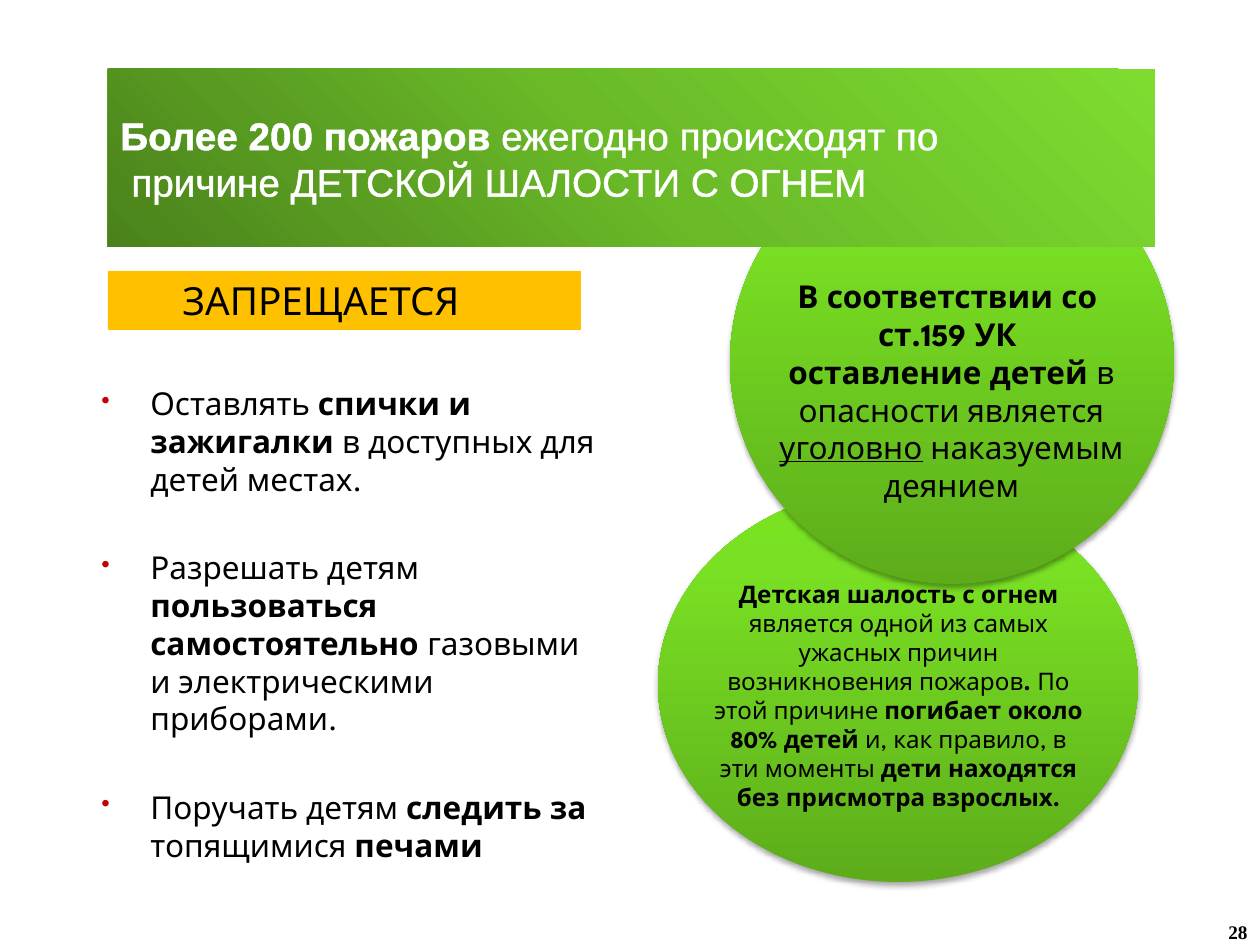
"""Builds a slide on fires caused by children playing with fire."""
import dataclasses
import typing

import pptx
import pptx.dml.color
import pptx.enum.shapes
import pptx.enum.text
import pptx.oxml
import pptx.oxml.ns
import pptx.util

SCALE = 914400 / 126
ALIGN = pptx.enum.text.PP_ALIGN
ANCHOR = pptx.enum.text.MSO_ANCHOR
SHAPE = pptx.enum.shapes.MSO_SHAPE
COLORS = {
    "black": "000000", "white": "FFFFFF", "amber": "FFC000", "bullet": "C40000",
    "leaf_dark": "5DAD1B", "leaf": "79E023", "leaf_light": "79E520",
    "banner_dark": "4B821C", "banner": "6ABA28", "banner_light": "7EDC30",
}


class Box(typing.NamedTuple):
    left: int
    top: int
    width: int
    height: int


class Run(typing.NamedTuple):
    text: str
    bold: bool = False
    underline: bool = False


class Line(typing.NamedTuple):
    runs: list[Run]
    indent: int = 0


@dataclasses.dataclass
class Style:
    size: float
    font: str = "League Spartan"
    color: str = "black"
    align: ALIGN = ALIGN.LEFT
    anchor: ANCHOR = ANCHOR.TOP
    outlined: bool = False
    bulleted: bool = False
    gap: int = 0


@dataclasses.dataclass
class Gradient:
    stops: list[tuple[int, str]]
    direction: str


LEAF = Gradient(
    [(0, "leaf_dark"), (80, "leaf"), (100, "leaf_light")],
    '<a:lin ang="16200000" scaled="0"/>',
)
BANNER = Gradient(
    [(0, "banner_dark"), (50, "banner"), (100, "banner_light")],
    '<a:path path="circle"><a:fillToRect t="100000" r="100000"/></a:path>',
)
CIRCLES = [Box(658, 486, 480, 396), Box(730, 140, 444, 444)]
TITLE = [
    Line([Run("Более 200 пожаров", True), Run(" ежегодно происходят по")]),
    Line([Run("причине ДЕТСКОЙ ШАЛОСТИ С ОГНЕМ")], 11),
]
LAW = [
    Line([Run("В соответствии со ", True)]),
    Line([Run("ст.159 УК ", True)]),
    Line([
        Run("оставление детей ", True), Run("в опасности является "),
        Run("уголовно", underline=True), Run(" наказуемым деянием"),
    ]),
]
DANGER = [Line([
    Run("Детская шалость с огнем ", True),
    Run("является одной из самых ужасных причин возникновения пожаров"),
    Run(". ", True), Run("По этой причине "),
    Run("погибает около 80% детей ", True),
    Run("и, как правило, в эти моменты "),
    Run("дети находятся без присмотра взрослых.", True),
])]
BANS = [
    Line([Run("Оставлять "), Run("спички и зажигалки ", True),
          Run("в доступных для детей местах.")], 57),
    Line([Run("Разрешать детям "), Run("пользоваться самостоятельно ", True),
          Run("газовыми и электрическими приборами.")], 57),
    Line([Run("Поручать детям "), Run("следить за ", True),
          Run("топящимися "), Run("печами", True)], 57),
]


def emu(pixels: int) -> int:
    return round(pixels * SCALE)


def rgb(name: str) -> pptx.dml.color.RGBColor:
    return pptx.dml.color.RGBColor.from_string(COLORS[name])


def element(xml: str):
    head, mark, tail = xml.partition(">")
    closing = "/" if head.endswith("/") else ""
    return pptx.oxml.parse_xml(
        f"{head.rstrip('/')} {pptx.oxml.ns.nsdecls('a')}{closing}{mark}{tail}"
    )


def draw_shape(slide, kind: SHAPE, box: Box, fill: typing.Union[str, Gradient]):
    shape = slide.shapes.add_shape(kind, *map(emu, box))
    if isinstance(fill, Gradient):
        stops = "".join(
            f'<a:gs pos="{place * 1000}"><a:srgbClr val="{COLORS[name]}"/></a:gs>'
            for place, name in fill.stops
        )
        shape._element.spPr.append(element(
            f'<a:gradFill rotWithShape="1"><a:gsLst>{stops}</a:gsLst>{fill.direction}</a:gradFill>'
        ))
    else:
        shape.fill.solid()
        shape.fill.fore_color.rgb = rgb(fill)
    shape.line.fill.background()
    shape.shadow.inherit = False
    return shape


def draw_circle(slide, box: Box) -> None:
    shape = draw_shape(slide, SHAPE.OVAL, box, LEAF)
    effects = shape._element.spPr.find(pptx.oxml.ns.qn("a:effectLst"))
    effects.append(element(
        f'<a:outerShdw blurRad="{pptx.util.Pt(3.1)}" dist="{pptx.util.Pt(1.8)}" '
        'dir="5400000" rotWithShape="0"><a:srgbClr val="000000">'
        '<a:alpha val="35000"/></a:srgbClr></a:outerShdw>'
    ))


def add_run(paragraph, content: Run, style: Style) -> None:
    run = paragraph.add_run()
    run.text = content.text
    run.font.name = style.font
    run.font.size = pptx.util.Pt(style.size)
    run.font.bold = content.bold
    run.font.underline = content.underline
    run.font.color.rgb = rgb(style.color)
    if style.outlined:
        run._r.get_or_add_rPr().insert(0, element(
            f'<a:ln w="{pptx.util.Pt(1.45)}"><a:solidFill>'
            f'<a:srgbClr val="{COLORS[style.color]}"/></a:solidFill></a:ln>'
        ))


def write(shape, lines: list[Line], style: Style) -> None:
    frame = shape.text_frame
    frame.word_wrap = True
    frame.vertical_anchor = style.anchor
    for index, line in enumerate(lines):
        paragraph = frame.add_paragraph() if index else frame.paragraphs[0]
        properties = paragraph._p.get_or_add_pPr()
        properties.set("marL", str(emu(line.indent)))
        if style.bulleted:
            properties.set("indent", str(emu(-49)))
            for xml in (
                f'<a:buClr><a:srgbClr val="{COLORS["bullet"]}"/></a:buClr>',
                '<a:buSzPct val="80000"/>',
                '<a:buChar char="•"/>',
            ):
                properties.append(element(xml))
        paragraph.alignment = style.align
        if index and style.gap:
            paragraph.space_before = pptx.util.Pt(style.gap)
        for content in line.runs:
            add_run(paragraph, content, style)


def write_box(slide, box: Box, lines: list[Line], style: Style) -> None:
    write(slide.shapes.add_textbox(*map(emu, box)), lines, style)


def main() -> None:
    presentation = pptx.Presentation()
    presentation.slide_width, presentation.slide_height = emu(1260), emu(945)
    slide = presentation.slides.add_slide(presentation.slide_layouts[6])
    for box in CIRCLES:
        draw_circle(slide, box)
    banner = draw_shape(slide, SHAPE.RECTANGLE, Box(108, 69, 1047, 178), BANNER)
    write(banner, TITLE, Style(22.1, "Arial", "white", anchor=ANCHOR.MIDDLE, outlined=True))
    write_box(slide, Box(740, 271, 423, 242), LAW, Style(18, align=ALIGN.CENTER))
    write_box(slide, Box(697, 573, 403, 248), DANGER, Style(13.8, align=ALIGN.CENTER))
    label = draw_shape(slide, SHAPE.RECTANGLE, Box(108, 271, 473, 59), "amber")
    write(label, [Line([Run("ЗАПРЕЩАЕТСЯ")], 62),],
          Style(22.1, anchor=ANCHOR.MIDDLE, outlined=True))
    write_box(slide, Box(81, 378, 529, 501), BANS, Style(18, bulleted=True, gap=29))
    write_box(slide, Box(998, 914, 262, 31), [Line([Run("28", True)])],
              Style(11, "Times New Roman", align=ALIGN.RIGHT))
    presentation.save("out.pptx")


if __name__ == "__main__":
    main()
